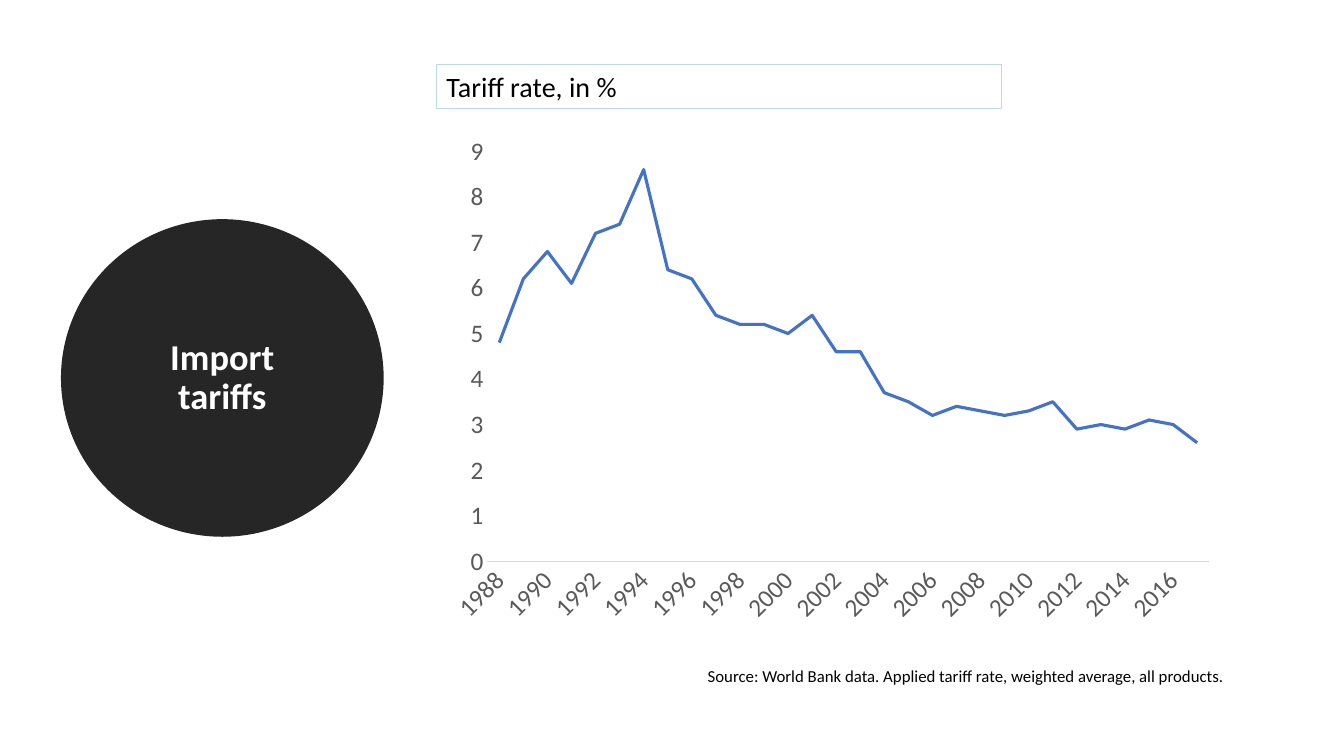
from dataclasses import dataclass

from pptx import Presentation
from pptx.chart.data import CategoryChartData
from pptx.dml.color import RGBColor
from pptx.enum.chart import XL_CHART_TYPE, XL_TICK_MARK
from pptx.enum.shapes import MSO_SHAPE
from pptx.enum.text import MSO_ANCHOR, PP_ALIGN
from pptx.util import Inches, Pt

LINE_CHART = XL_CHART_TYPE.LINE
NO_TICKS = XL_TICK_MARK.NONE
OVAL, RECTANGLE = MSO_SHAPE.OVAL, MSO_SHAPE.RECTANGLE
MIDDLE = MSO_ANCHOR.MIDDLE
LEFT, CENTER = PP_ALIGN.LEFT, PP_ALIGN.CENTER


@dataclass(frozen=True)
class Theme:
    font: str = "Calibri"
    dark: str = "262626"
    white: str = "FFFFFF"
    black: str = "000000"
    frame: str = "BDD7EE"
    series: str = "4472C4"
    axis_text: str = "595959"
    axis_line: str = "D9D9D9"
    topic_size: float = 26
    heading_size: float = 20
    axis_size: float = 18
    source_size: float = 12


THEME = Theme()
FIRST_YEAR = 1988
TARIFF_RATES = [
    4.8, 6.2, 6.8, 6.1, 7.2, 7.4, 8.6, 6.4, 6.2, 5.4,
    5.2, 5.2, 5.0, 5.4, 4.6, 4.6, 3.7, 3.5, 3.2, 3.4,
    3.3, 3.2, 3.3, 3.5, 2.9, 3.0, 2.9, 3.1, 3.0, 2.6,
]


def apply_format(target, values):
    for name, value in values.items():
        setattr(target, name, value)


def style_font(font, size, color, bold=False):
    apply_format(font, {"name": THEME.font, "size": Pt(size), "bold": bold})
    font.color.rgb = RGBColor.from_string(color)


def style_line(line, color, width):
    line.color.rgb = RGBColor.from_string(color)
    line.width = Pt(width)


def write_text(box, text, size, color, bold=False, align=LEFT, spacing=1.0):
    box.text_frame.word_wrap = True
    para = box.text_frame.paragraphs[0]
    apply_format(para, {"alignment": align, "line_spacing": spacing})
    span = para.add_run()
    span.text = text
    style_font(span.font, size, color, bold)


def add_panel(page, preset, place, line_color, line_width, fill=None):
    panel = page.shapes.add_shape(preset, *map(Inches, place))
    panel.shadow.inherit = False
    if fill:
        panel.fill.solid()
        panel.fill.fore_color.rgb = RGBColor.from_string(fill)
    else:
        panel.fill.background()
    style_line(panel.line, line_color, line_width)
    panel.text_frame.vertical_anchor = MIDDLE
    return panel


def style_axis(axis):
    apply_format(axis, {
        "has_major_gridlines": False,
        "major_tick_mark": NO_TICKS,
        "minor_tick_mark": NO_TICKS,
    })
    style_font(axis.tick_labels.font, THEME.axis_size, THEME.axis_text)


def add_tariff_chart(page, place):
    data = CategoryChartData(number_format="General")
    data.categories = [str(FIRST_YEAR + step) for step in range(len(TARIFF_RATES))]
    data.add_series("Series 1", TARIFF_RATES)
    chart = page.shapes.add_chart(LINE_CHART, *map(Inches, place), data).chart
    apply_format(chart, {"has_legend": False, "has_title": False})
    style_font(chart.font, 10, THEME.black)
    chart.plots[0].vary_by_categories = False

    series = chart.plots[0].series[0]
    series.smooth = False
    style_line(series.format.line, THEME.series, 2.25)

    years, rates = chart.category_axis, chart.value_axis
    for axis in (years, rates):
        style_axis(axis)
    style_line(years.format.line, THEME.axis_line, 0.75)
    rates.format.line.fill.background()
    apply_format(rates, {"minimum_scale": 0, "maximum_scale": 9, "major_unit": 1})


def main():
    deck = Presentation()
    apply_format(deck, {"slide_width": Inches(13.33), "slide_height": Inches(7.5)})
    page = deck.slides.add_slide(deck.slide_layouts[6])

    topic = add_panel(page, OVAL, (0.7, 2.27, 3.01, 2.96), THEME.dark, 13.75, THEME.dark)
    write_text(topic, "Import tariffs", THEME.topic_size, THEME.white, True, CENTER, 0.9)

    add_tariff_chart(page, (4.33, 1.25, 7.82, 5.03))

    source = page.shapes.add_textbox(*map(Inches, (6.92, 6.56, 6.12, 0.3)))
    write_text(
        source,
        "Source: World Bank data. Applied tariff rate, weighted average, all products.",
        THEME.source_size,
        THEME.black,
    )

    heading = add_panel(page, RECTANGLE, (4.33, 0.64, 5.6, 0.44), THEME.frame, 0.75)
    write_text(heading, "Tariff rate, in %", THEME.heading_size, THEME.black)

    deck.save("out.pptx")


if __name__ == "__main__":
    main()
